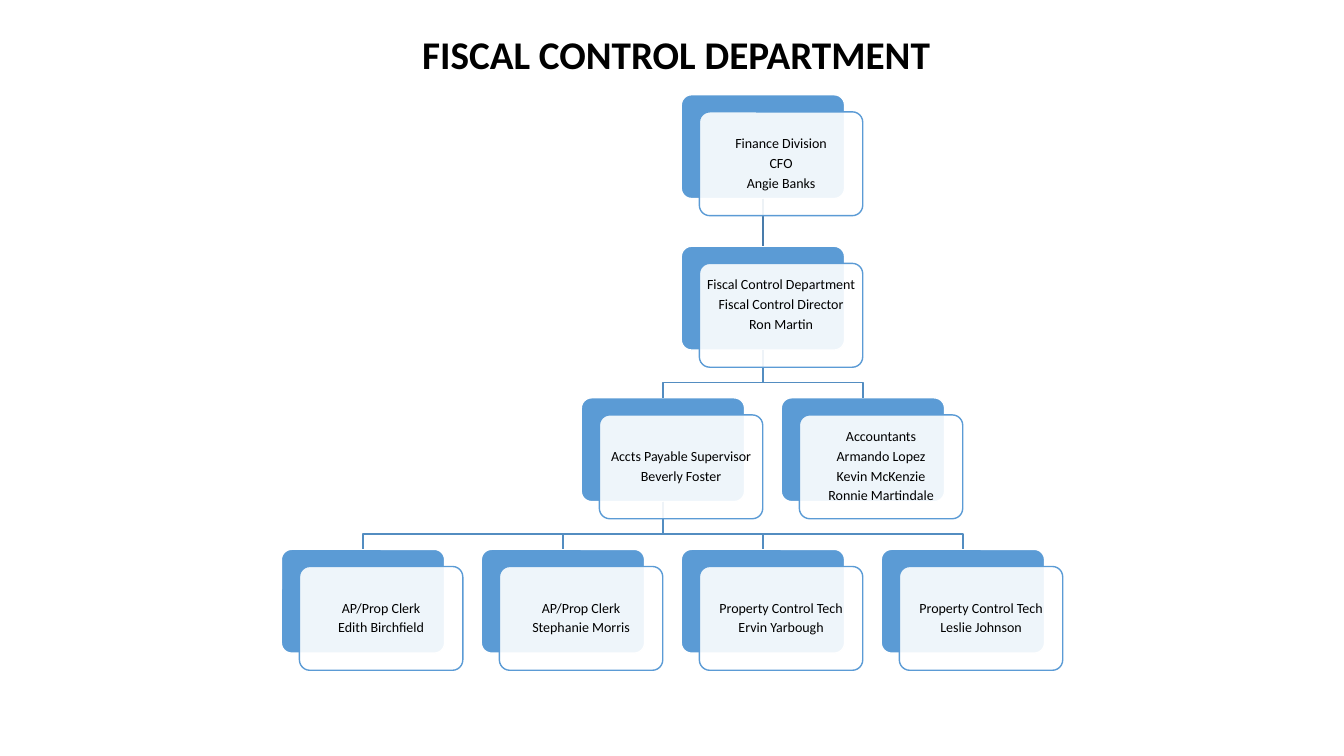
import pptx
import pptx.dml.color
import pptx.enum.shapes
import pptx.enum.text
import pptx.oxml
import pptx.oxml.ns
import pptx.util
from dataclasses import dataclass
from lxml import etree

Inches = pptx.util.Inches
Pt = pptx.util.Pt
RGB = pptx.dml.color.RGBColor.from_string
ShapeType = pptx.enum.shapes.MSO_SHAPE


@dataclass(frozen=True)
class Theme:
    """Colours and type sizes of the slide."""
    font: str = "Calibri"
    title_size: float = 28
    card_size: float = 10
    text: str = "000000"
    accent: str = "5B9BD5"
    paper: str = "FFFFFF"
    branch: str = "538DC1"
    trunk: str = "497CAB"
    line_width: float = 1


@dataclass(frozen=True)
class Box:
    """A rectangle in inches."""
    left: float
    top: float
    width: float
    height: float


@dataclass(frozen=True)
class Position:
    """A place in the chart: column, row, parent key and text lines."""
    column: float
    row: int
    parent: str
    lines: tuple


THEME = Theme()
SLIDE = Box(0, 0, 13.33, 7.5)
TITLE = Box(2.57, 0.27, 8.27, 0.58)
CHART = Box(2.79, 0.94, 7.75, 5.71)
CARD_WIDTH, CARD_HEIGHT = 1.62, 1.03
SHIFT_RIGHT, SHIFT_DOWN = 0.18, 0.17
BEND = 0.32
LINE_PITCH = 0.2

STAFF = {
    "cfo": Position(2, 0, "", ("Finance Division", "CFO", "Angie Banks")),
    "director": Position(2, 1, "cfo", (
        "Fiscal Control Department", "Fiscal Control Director", "Ron Martin")),
    "supervisor": Position(1.5, 2, "director", ("Accts Payable Supervisor", "Beverly Foster")),
    "clerk 1": Position(0, 3, "supervisor", ("AP/Prop Clerk", "Edith Birchfield")),
    "clerk 2": Position(1, 3, "supervisor", ("AP/Prop Clerk", "Stephanie Morris")),
    "tech 1": Position(2, 3, "supervisor", ("Property Control Tech", "Ervin Yarbough")),
    "tech 2": Position(3, 3, "supervisor", ("Property Control Tech", "Leslie Johnson")),
    "accountants": Position(2.5, 2, "director", (
        "Accountants", "Armando Lopez", "Kevin McKenzie", "Ronnie Martindale")),
}
EXTRA_BOTTOM = {"director": LINE_PITCH}


def apply_format(target, values):
    """Set each named attribute of the target."""
    for name, value in values.items():
        setattr(target, name, value)


def lengths(box):
    """Return the box as four slide lengths."""
    return [Inches(value) for value in (box.left, box.top, box.width, box.height)]


def write_lines(shape, lines, size, space_after=0, bold=False, **frame_values):
    """Write centred paragraphs into the shape."""
    frame = shape.text_frame
    apply_format(frame, {
        "word_wrap": True,
        "vertical_anchor": pptx.enum.text.MSO_ANCHOR.MIDDLE,
        **frame_values,
    })
    for index, line in enumerate(lines):
        paragraph = frame.paragraphs[0] if index == 0 else frame.add_paragraph()
        apply_format(paragraph, {
            "alignment": pptx.enum.text.PP_ALIGN.CENTER,
            "line_spacing": 0.9,
            "space_after": Pt(space_after),
        })
        run = paragraph.add_run()
        run.text = line
        apply_format(run.font, {"name": THEME.font, "size": Pt(size), "bold": bold})
        run.font.color.rgb = RGB(THEME.text)


def style_line(shape, color):
    """Give the shape a thin solid line."""
    shape.line.color.rgb = RGB(color)
    shape.line.width = Pt(THEME.line_width)


def add_card(slide, box, fill, line):
    """Add one rounded card filling the box."""
    card = slide.shapes.add_shape(ShapeType.ROUNDED_RECTANGLE, *lengths(box))
    card.adjustments[0] = 0.1
    card.shadow.inherit = False
    card.fill.solid()
    card.fill.fore_color.rgb = RGB(fill)
    style_line(card, line)
    return card


def add_label_card(slide, box, lines, extra_bottom):
    """Add the translucent text card, offset from the back card's box."""
    front = Box(box.left + SHIFT_RIGHT, box.top + SHIFT_DOWN, box.width, box.height)
    card = add_card(slide, front, THEME.paper, THEME.accent)
    color = card.fill._xPr.find(".//" + pptx.oxml.ns.qn("a:srgbClr"))
    etree.SubElement(color, pptx.oxml.ns.qn("a:alpha"), val="90000")
    write_lines(
        card, lines, THEME.card_size, space_after=3.3,
        margin_left=Inches(0.03), margin_right=Inches(0.03),
        margin_top=Inches(0.04), margin_bottom=Inches(0.04 + extra_bottom))


def add_trunk(slide, parent_card, child_card):
    """Join two cards that stand one above the other."""
    trunk = slide.shapes.add_connector(pptx.enum.shapes.MSO_CONNECTOR.STRAIGHT, 0, 0, 0, 0)
    trunk.begin_connect(parent_card, 2)
    trunk.end_connect(child_card, 0)
    style_line(trunk, THEME.trunk)
    etree.SubElement(trunk._element.spPr, pptx.oxml.ns.qn("a:effectLst"))


def add_branch(slide, parent_box, child_box):
    """Draw the bent line from a parent's bottom to a child's top."""
    start_x = parent_box.left + parent_box.width / 2
    start_y = parent_box.top + parent_box.height
    end_x = child_box.left + child_box.width / 2
    corners = [(start_x, start_y + BEND), (end_x, start_y + BEND), (end_x, child_box.top)]
    builder = slide.shapes.build_freeform(Inches(start_x), Inches(start_y))
    builder.add_line_segments([(Inches(x), Inches(y)) for x, y in corners], close=False)
    branch = builder.convert_to_shape()
    branch.fill.background()
    branch.shadow.inherit = False
    style_line(branch, THEME.branch)


def add_staff_chart(slide, area):
    """Place all cards and their links inside the area."""
    step_x = (area.width - CARD_WIDTH - SHIFT_RIGHT) / 3
    step_y = (area.height - CARD_HEIGHT - SHIFT_DOWN) / 3
    boxes = {
        key: Box(area.left + position.column * step_x, area.top + position.row * step_y,
                 CARD_WIDTH, CARD_HEIGHT)
        for key, position in STAFF.items()
    }
    cards = {key: add_card(slide, box, THEME.accent, THEME.paper) for key, box in boxes.items()}
    for key, position in STAFF.items():
        if not position.parent:
            continue
        if position.column == STAFF[position.parent].column:
            add_trunk(slide, cards[position.parent], cards[key])
        else:
            add_branch(slide, boxes[position.parent], boxes[key])
    for key, position in STAFF.items():
        add_label_card(slide, boxes[key], position.lines, EXTRA_BOTTOM.get(key, 0))


def add_title(slide, box):
    """Add the heading in the box."""
    title = slide.shapes.add_textbox(*lengths(box))
    write_lines(title, ["FISCAL CONTROL DEPARTMENT"], THEME.title_size, bold=True)


def main():
    """Build and save the presentation."""
    presentation = pptx.Presentation()
    apply_format(presentation, {
        "slide_width": Inches(SLIDE.width), "slide_height": Inches(SLIDE.height)})
    slide = presentation.slides.add_slide(presentation.slide_layouts[6])
    add_staff_chart(slide, CHART)
    add_title(slide, TITLE)
    presentation.save("out.pptx")


if __name__ == "__main__":
    main()
